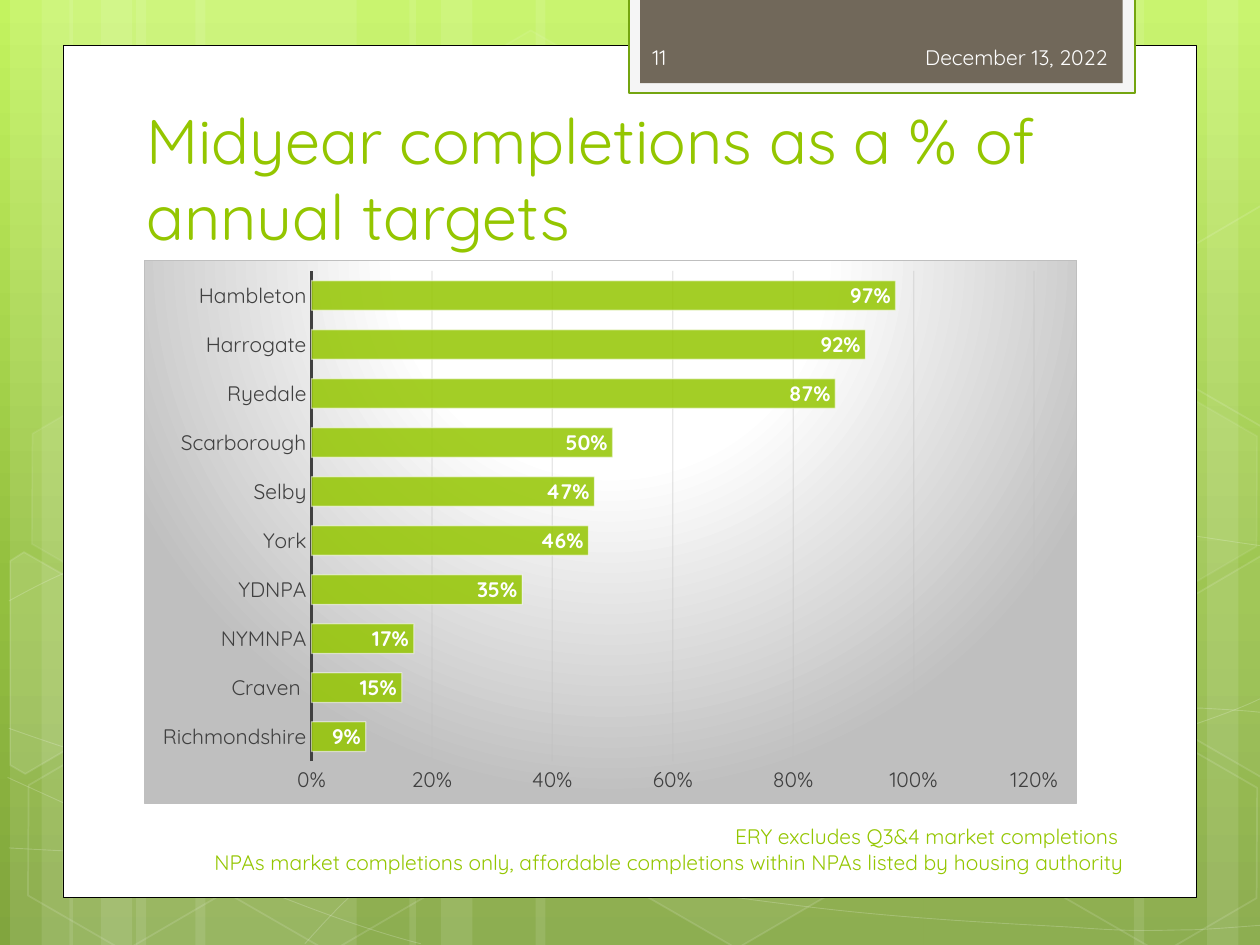
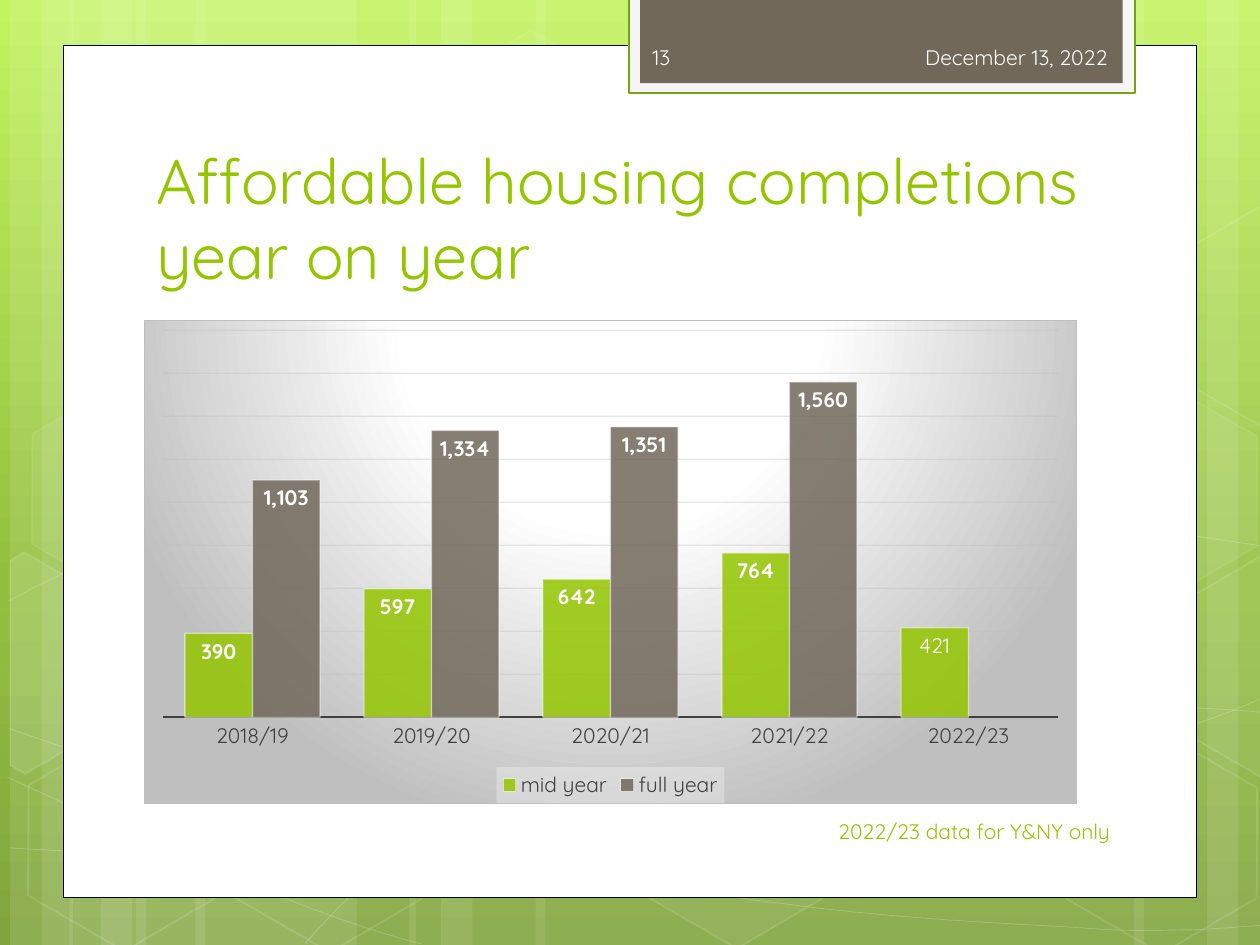
import math
from dataclasses import dataclass

from lxml import etree
from pptx import Presentation
from pptx import util as u
from pptx.chart import data as chart_data
from pptx.dml.color import RGBColor
from pptx.enum import chart as kinds, shapes, text

NS = {"a": "http://schemas.openxmlformats.org/drawingml/2006/main",
      "c": "http://schemas.openxmlformats.org/drawingml/2006/chart",
      "p": "http://schemas.openxmlformats.org/presentationml/2006/main"}


@dataclass(frozen=True)
class Theme:
    """Colours, font and type sizes of the deck."""
    font: str = "Quicksand"
    title_size: int = 36
    body_size: int = 12
    green: str = "94C600"
    dark_green: str = "74A510"
    brown: str = "71685A"
    white: str = "FFFFFF"
    tab_text: str = "FEFEFE"
    tab_edge: str = "F5F5F5"
    black: str = "000000"
    axis: str = "404040"
    legend: str = "F2F2F2"
    border: str = "BFBFBF"
    grid: tuple = ((100, "0D0D0D", 42), (0, "BFBFBF", 36))
    backdrop: tuple = ((0, "C3F35F", 100), (62, "93BF3F", 100), (100, "81A53E", 100))
    spotlight: tuple = ((0, "FFFFFF", 100), (39, "FFFFFF", 100), (100, "BFBFBF", 100))


@dataclass(frozen=True)
class Box:
    """A rectangle in inches."""
    left: float
    top: float
    width: float
    height: float

    def inner(self, left, top, width, height):
        """Return a box placed relative to this one."""
        return Box(self.left + left, self.top + top, width, height)

    def emu(self):
        """Return the four lengths."""
        return [u.Inches(n) for n in (self.left, self.top, self.width, self.height)]


THEME = Theme()
PAGE = Box(0, 0, 10, 7.5)
TAB = Box(4.99, -0.02, 4.02, 0.76)
TILT = 30
DOWNWARD = '<a:lin ang="5400000" scaled="0"/>'
FROM_CENTRE = '<a:path path="circle"><a:fillToRect l="50000" t="-80000" r="50000" b="180000"/></a:path>'

STRIPES = [(1.08, 1.75), (0.08, 0.5), (0.33, 0.83), (1.55, 1.75), (0.55, 0.5), (0.8, 0.83),
           (7.33, 1.75), (9.58, 0.5), (9, 0.83), (4.25, 3.08), (3.25, 0.5), (3.5, 0.83)]
CURVES = [
    [(0.07, 6.73), (0.61, 6.76), (1.15, 6.79), (1.9, 6.78), (2.65, 6.77), (3.58, 6.75),
     (4.58, 6.65), (5.58, 6.55), (7, 6.36), (7.92, 6.17), (8.83, 5.98), (9.77, 5.68), (10.07, 5.51)],
    [(0.07, 4.77), (0.36, 4.61), (0.65, 4.46), (1.21, 4.31), (1.78, 4.16), (2.59, 3.94),
     (3.47, 3.87), (4.36, 3.8), (5.44, 3.79), (6.54, 3.87), (7.64, 3.95), (9.47, 4.26), (10.07, 4.34)],
    [(0.06, 6.17), (1.27, 6.72), (2.47, 7.27), (3.34, 7.49)],
    [(0.07, 5.78), (0.38, 5.89), (0.7, 6), (1.28, 6.16), (1.86, 6.31), (2.73, 6.56),
     (3.57, 6.73), (4.4, 6.9), (5.45, 7.08), (6.28, 7.18), (7.11, 7.29), (8, 7.33),
     (8.53, 7.36), (9.05, 7.4), (9.19, 7.38), (9.45, 7.38), (9.71, 7.37), (9.89, 7.35), (10.07, 7.34)],
    [(2.42, 7.49), (2.6, 7.29), (2.78, 7.09), (3.02, 6.91), (3.26, 6.73), (3.6, 6.53),
     (3.88, 6.39), (4.16, 6.25), (4.33, 6.19), (4.7, 6.09), (5.06, 5.99), (5.73, 5.85),
     (6.08, 5.78), (6.44, 5.71), (6.49, 5.71), (6.8, 5.69), (7.11, 5.66), (7.6, 5.63),
     (7.94, 5.62), (8.29, 5.61), (8.86, 5.62), (8.86, 5.62), (9.1, 5.62), (9.3, 5.62),
     (9.53, 5.62), (9.71, 5.63), (9.88, 5.64), (9.97, 5.65), (10.06, 5.66), (10.03, 5.65), (10.06, 5.66)],
]
HEXAGONS = [(3.34, 0.36, 4, 8), (4.97, 5.89, 6, 12), (0.11, 5.91, 0, 12), (0.14, 3.12, 7, 8),
            (1.74, 5.92, 0, 12), (7.53, 4.53, 10, 12), (8.34, 5.93, 0, 12), (8.34, 3.14, 7, 8)]
CUT_HEXAGONS = [
    ((0.36, 5.35), [(0.08, 4.45), (0.19, 4.38), (0.96, 4.82), (0.95, 5.7), (0.2, 6.14), (0.08, 6.07)], 10),
    ((9.85, 5.2), [(9.26, 4.85), (10.01, 4.41), (10.09, 4.46), (10.09, 6.13), (10.02, 6.17), (9.26, 5.73)], 4),
    ((9.85, 2.41), [(9.26, 2.07), (10.01, 1.63), (10.1, 1.68), (10.09, 3.35), (10.02, 3.39), (9.26, 2.95)], 0),
]


def rgb(value):
    """Turn a hex string into a colour."""
    return RGBColor.from_string(value)


def fade(root, route, percent):
    """Give every colour found along the route an opacity."""
    for color in root.findall(f"{route}/a:solidFill/a:srgbClr", NS):
        etree.SubElement(color, f"{{{NS['a']}}}alpha", val=str(percent * 1000))


def gradient(stops, direction):
    """Return the XML of a gradient fill."""
    marks = "".join(f'<a:gs pos="{at * 1000}"><a:srgbClr val="{color}"><a:alpha val="{alpha * 1000}"/>'
                    f'</a:srgbClr></a:gs>' for at, color, alpha in stops)
    return f'<a:gradFill xmlns:a="{NS["a"]}"><a:gsLst>{marks}</a:gsLst>{direction}</a:gradFill>'


def use_gradient(plain, stops):
    """Replace a solid fill element by a downward gradient."""
    plain.getparent().replace(plain, etree.fromstring(gradient(stops, DOWNWARD)))


def chart_properties(content):
    """Return a chart spPr element around the given fill and line."""
    return etree.fromstring(f'<c:spPr xmlns:c="{NS["c"]}" xmlns:a="{NS["a"]}">{content}</c:spPr>')


def finish(shape, fill=None, line=None, weight=1, fill_alpha=100, line_alpha=100):
    """Set the fill and outline of a shape and drop its shadow."""
    shape.shadow.inherit = False
    if fill:
        shape.fill.solid()
        shape.fill.fore_color.rgb = rgb(fill)
    else:
        shape.fill.background()
    if line:
        shape.line.color.rgb = rgb(line)
        shape.line.width = u.Pt(weight)
    else:
        shape.line.fill.background()
    if fill_alpha < 100:
        fade(shape.element, "p:spPr", fill_alpha)
    if line_alpha < 100:
        fade(shape.element, "p:spPr/a:ln", line_alpha)


def add_preset(page, box, kind=shapes.MSO_SHAPE.RECTANGLE, **look):
    """Add a finished preset shape."""
    shape = page.shapes.add_shape(kind, *box.emu())
    finish(shape, **look)
    return shape


def add_outline(page, points, close, **look):
    """Add a finished freeform through points in inches."""
    spots = [(u.Inches(x), u.Inches(y)) for x, y in points]
    builder = page.shapes.build_freeform(*spots[0])
    builder.add_line_segments(spots[1:], close=close)
    shape = builder.convert_to_shape()
    finish(shape, **look)
    return shape


def bend(shape):
    """Turn every three straight segments into one cubic curve."""
    legs = shape.element.findall(".//a:lnTo", NS)
    for first in range(0, len(legs), 3):
        curve = etree.Element(f"{{{NS['a']}}}cubicBezTo")
        legs[first].addprevious(curve)
        for leg in legs[first:first + 3]:
            curve.append(leg[0])
            leg.getparent().remove(leg)


def level(points, pivot):
    """Turn points back by the tilt around a pivot."""
    cos, sin = math.cos(math.radians(TILT)), math.sin(math.radians(TILT))
    offsets = [(x - pivot[0], y - pivot[1]) for x, y in points]
    return [(pivot[0] + x * cos + y * sin, pivot[1] - x * sin + y * cos) for x, y in offsets]


def draw_backdrop(page, box):
    """Draw the stripes, curves and hexagons behind the card."""
    white = THEME.white
    for left, width in STRIPES:
        add_preset(page, box.inner(left, 0, width, box.height), fill=white, fill_alpha=10)
    for knots in CURVES:
        bend(add_outline(page, knots, False, line=white, weight=0.5, line_alpha=20))
    for left, top, tint, edge in HEXAGONS:
        hexagon = add_preset(page, box.inner(left, top, 1.75, 1.52), shapes.MSO_SHAPE.HEXAGON,
                             fill=white if tint else None, fill_alpha=tint or 100,
                             line=white, line_alpha=edge)
        hexagon.adjustments[0] = 0.285
        hexagon.rotation = TILT
    for pivot, corners, tint in CUT_HEXAGONS:
        piece = add_outline(page, level(corners, pivot), True, fill=white if tint else None,
                            fill_alpha=tint or 100, line=white, line_alpha=12)
        piece.rotation = TILT


def draw_card(page, box):
    """Draw the white card and the tab that hangs over it."""
    add_preset(page, box.inner(0.5, 0.36, 9, 6.76), fill=THEME.white, line=THEME.black, weight=0.5)
    add_preset(page, TAB, fill=THEME.tab_edge, line=THEME.dark_green, weight=1.25)
    add_preset(page, TAB.inner(0.09, 0, 3.83, 0.68), fill=THEME.brown)


def dress_layout(layout, page):
    """Draw the shared decor and move it to the layout."""
    layout.background.fill.solid()
    use_gradient(layout.element.find(".//p:bgPr/a:solidFill", NS), THEME.backdrop)
    draw_backdrop(page, PAGE)
    draw_card(page, PAGE)
    decor = [shape for shape in page.shapes if not shape.is_placeholder]
    for number, shape in enumerate(decor, 100):
        shape.element.find(".//p:cNvPr", NS).set("id", str(number))
        layout.shapes.element.append(shape.element)


def style_font(font, color, size=THEME.body_size, bold=False):
    """Set face, size, colour and weight."""
    font.name, font.size, font.bold = THEME.font, u.Pt(size), bold
    font.color.rgb = rgb(color)


def write(frame, lines, color, size=THEME.body_size, align=text.PP_ALIGN.LEFT,
          anchor=text.MSO_ANCHOR.MIDDLE):
    """Write one paragraph for each line."""
    frame.word_wrap = True
    frame.vertical_anchor = anchor
    for number, line in enumerate(lines):
        para = frame.add_paragraph() if number else frame.paragraphs[0]
        para.alignment = align
        span = para.add_run()
        span.text = line
        style_font(span.font, color, size)


def add_label(page, box, lines, color, align=text.PP_ALIGN.LEFT):
    """Add a small text box."""
    write(page.shapes.add_textbox(*box.emu()).text_frame, lines, color, align=align)


def set_title(page, box, title):
    """Move, fill and format the title placeholder."""
    holder = page.shapes.title
    holder.left, holder.top, holder.width, holder.height = box.emu()
    write(holder.text_frame, [title], THEME.green, THEME.title_size, anchor=text.MSO_ANCHOR.BOTTOM)


def fill_tab(page, box, number):
    """Write the page number and date on the tab."""
    add_label(page, box.inner(0.09, 0.27, 1.46, 0.4), [number], THEME.tab_text)
    add_label(page, box.inner(1.57, 0.27, 2.33, 0.4), ["December 13, 2022"], THEME.tab_text,
              text.PP_ALIGN.RIGHT)


def style_axes(chart, top, unit, number_format):
    """Format both axes and the gridlines."""
    for axis in (chart.category_axis, chart.value_axis):
        axis.major_tick_mark = axis.minor_tick_mark = kinds.XL_TICK_MARK.NONE
        style_font(axis.tick_labels.font, THEME.axis)
    rule = chart.category_axis.format.line
    rule.color.rgb, rule.width = rgb(THEME.axis), u.Pt(1.5)
    values = chart.value_axis
    values.minimum_scale, values.maximum_scale, values.major_unit = 0, top, unit
    values.tick_labels.number_format = number_format
    values.tick_labels.number_format_is_linked = False
    values.format.line.fill.background()
    values.has_major_gridlines = True
    grid = values.major_gridlines.format.line
    grid.fill.solid()
    grid.color.rgb, grid.width = rgb(THEME.border), u.Pt(0.75)
    use_gradient(chart.element.find(".//c:majorGridlines/c:spPr/a:ln/a:solidFill", NS), THEME.grid)


def style_series(series, color, number_format):
    """Format the bars and value labels of one series."""
    series.format.fill.solid()
    series.format.fill.fore_color.rgb = rgb(color)
    series.format.line.color.rgb, series.format.line.width = rgb(THEME.white), u.Pt(0.75)
    labels = series.data_labels
    labels.show_value = True
    labels.position = kinds.XL_LABEL_POSITION.INSIDE_END
    labels.number_format, labels.number_format_is_linked = number_format, False
    style_font(labels.font, THEME.white, bold=True)


def add_bars(page, box, kind, categories, series_values, top, unit, number_format):
    """Add a styled bar or column chart."""
    table = chart_data.CategoryChartData(number_format=number_format)
    table.categories = categories
    for name, values in series_values.items():
        table.add_series(name, values)
    chart = page.shapes.add_chart(kind, *box.emu(), table).chart
    chart.has_title = chart.has_legend = False
    style_font(chart.font, THEME.black, 10)
    style_axes(chart, top, unit, number_format)
    plot = chart.plots[0]
    plot.gap_width, plot.overlap, plot.vary_by_categories = 65, 0, False
    for series, color in zip(plot.series, (THEME.green, THEME.brown)):
        style_series(series, color, number_format)
    fade(chart.element, ".//c:ser/c:spPr", 85)
    fade(chart.element, ".//c:ser/c:spPr/a:ln", 50)
    border = f'<a:ln w="9525"><a:solidFill><a:srgbClr val="{THEME.border}"/></a:solidFill></a:ln>'
    chart.element.find("c:chart", NS).addnext(
        chart_properties(gradient(THEME.spotlight, FROM_CENTRE) + border))
    return chart


def add_legend(chart):
    """Put a tinted legend below the plot."""
    chart.has_legend = True
    chart.legend.position = kinds.XL_LEGEND_POSITION.BOTTOM
    chart.legend.include_in_layout = False
    style_font(chart.legend.font, THEME.axis)
    tint = chart_properties(f'<a:solidFill><a:srgbClr val="{THEME.legend}"/></a:solidFill>')
    fade(tint, ".", 39)
    chart.element.find(".//c:legend/c:overlay", NS).addnext(tint)


def build_targets(page, box):
    """Fill the slide on completions against targets."""
    set_title(page, box.inner(1.06, 0.81, 7.68, 1.25), "Midyear completions as a % of annual targets")
    fill_tab(page, TAB, "11")
    add_label(page, box.inner(1.01, 6.54, 8.01, 0.4), [
        "ERY excludes Q3&4 market completions ",
        "NPAs market completions only, affordable completions within NPAs listed by housing authority",
    ], THEME.green, text.PP_ALIGN.RIGHT)
    shares = {"Richmondshire": 0.09, "Craven ": 0.15, "NYMNPA": 0.17, "YDNPA": 0.35, "York": 0.46,
              "Selby": 0.47, "Scarborough": 0.5, "Ryedale": 0.87, "Harrogate": 0.92, "Hambleton": 0.97}
    add_bars(page, box.inner(1.14, 2.06, 7.41, 4.32), kinds.XL_CHART_TYPE.BAR_CLUSTERED,
             list(shares), {"Series 1": list(shares.values())}, 1.2, 0.2, "0%")


def build_years(page, box):
    """Fill the slide on completions by year."""
    set_title(page, box.inner(1.14, 1.12, 7.68, 1.25), "Affordable housing completions year on year")
    fill_tab(page, TAB, "13")
    add_label(page, box.inner(5.08, 6.4, 3.83, 0.4), ["2022/23 data for Y&NY only"],
              THEME.green, text.PP_ALIGN.RIGHT)
    chart = add_bars(page, box.inner(1.14, 2.54, 7.41, 3.84), kinds.XL_CHART_TYPE.COLUMN_CLUSTERED,
                     [f"{year}/{year - 1999}" for year in range(2018, 2023)],
                     {"mid year": (390, 597, 642, 764, 416),
                      "full year": (1103, 1334, 1351, 1560, None)}, 1800, 200, "#,##0")
    chart.value_axis.visible = False
    add_legend(chart)
    label = chart.plots[0].series[0].points[4].data_label
    span = label.text_frame.paragraphs[0].add_run()
    span.text = "421"
    style_font(span.font, THEME.white)
    label.position = kinds.XL_LABEL_POSITION.INSIDE_END


def main():
    """Build and save the deck."""
    deck = Presentation()
    deck.slide_width, deck.slide_height = u.Inches(PAGE.width), u.Inches(PAGE.height)
    layout = deck.slide_layouts[5]
    pages = [deck.slides.add_slide(layout) for _ in range(2)]
    dress_layout(layout, pages[0])
    for page, build in zip(pages, (build_targets, build_years)):
        build(page, PAGE)
    deck.save("out.pptx")


if __name__ == "__main__":
    main()
